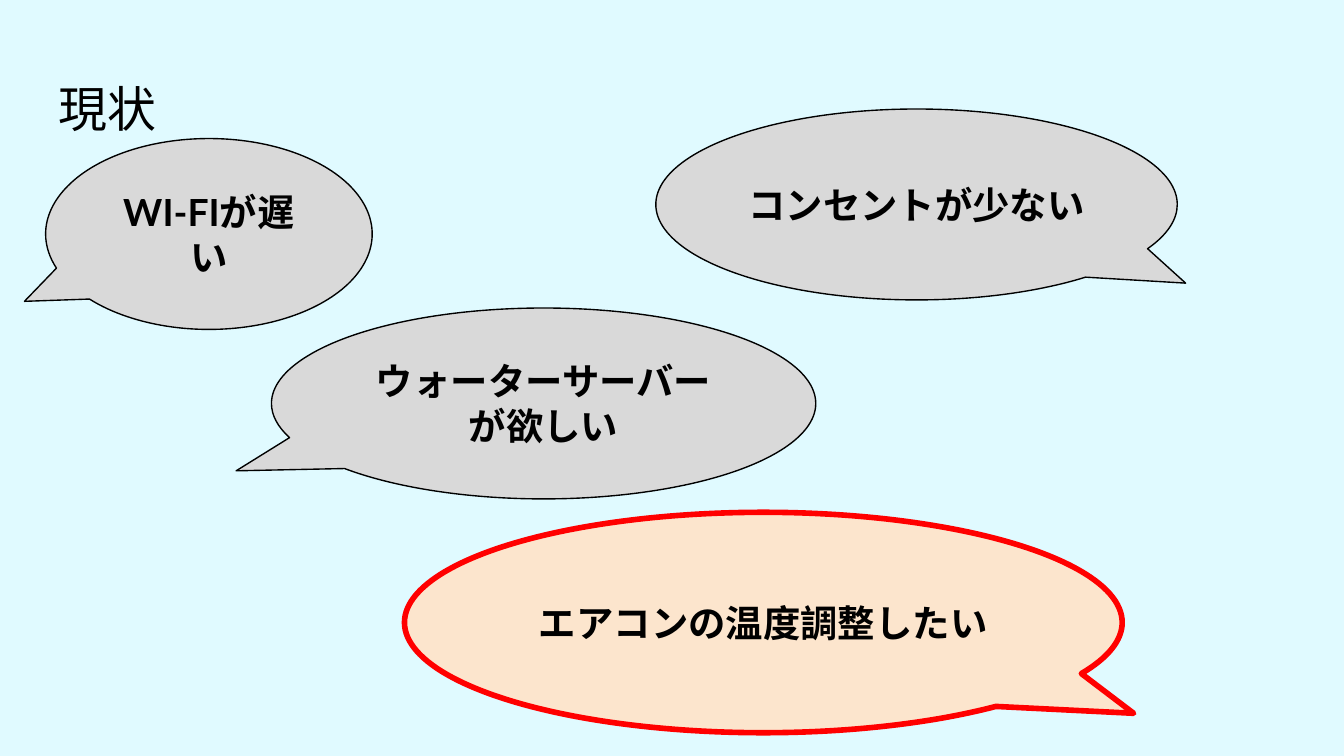
from dataclasses import dataclass

from pptx import Presentation
from pptx.dml.color import RGBColor
from pptx.enum.shapes import MSO_SHAPE
from pptx.enum.text import MSO_ANCHOR, PP_ALIGN
from pptx.util import Inches, Pt


@dataclass(frozen=True)
class Theme:
    font: str = "Lato"
    background: str = "E0FAFF"
    ink: str = "000000"
    bubble: str = "D9D9D9"
    highlight: str = "FCE5CD"
    alert: str = "FF0000"
    title_size: float = 26.2
    bubble_size: float = 20
    thin: float = 0.75
    thick: float = 3


theme = Theme()
deck = Presentation()
deck.slide_width = Inches(10)
deck.slide_height = deck.slide_width * 9 // 16
page = deck.slides.add_slide(deck.slide_layouts[6])
page.background.fill.solid()
page.background.fill.fore_color.rgb = RGBColor.from_string(theme.background)


def place(left, top, width, height):
    column, row = deck.slide_width / 100, deck.slide_height / 100
    return [round(share * unit) for share, unit in
            zip((left, top, width, height), (column, row, column, row))]


def write(box, text, *, size, bold=False, align=PP_ALIGN.LEFT, anchor=MSO_ANCHOR.TOP):
    frame = box.text_frame
    frame.word_wrap = True
    frame.vertical_anchor = anchor
    frame.margin_left = frame.margin_right = Inches(0.1)
    frame.margin_top = frame.margin_bottom = Inches(0.1)
    para = frame.paragraphs[0]
    para.alignment = align
    span = para.add_run()
    span.text = text
    span.font.name = theme.font
    span.font.size = Pt(size)
    span.font.bold = bold
    span.font.color.rgb = RGBColor.from_string(theme.ink)


title = page.shapes.add_textbox(*place(3.41, 8.65, 93.18, 11.2))
write(title, "現状", size=theme.title_size)

tail_left = (-0.565, 0.353)
tail_right = (0.516, 0.412)
plain = (theme.bubble, theme.ink, theme.thin)
emphasis = (theme.highlight, theme.alert, theme.thick)
bubbles = [
    ("WI-FIが遅い", (3.4, 18.33, 24.3, 25.25), tail_left, plain),
    ("コンセントが少ない", (48.8, 14.43, 38.8, 25.25), tail_right, plain),
    ("ウォーターサーバーが欲しい", (20.2, 40.75, 40.5, 25.25), tail_left, plain),
    ("エアコンの温度調整したい", (30.1, 67.77, 53.4, 29.16), tail_right, emphasis),
]

for text, area, tail, (fill, outline, weight) in bubbles:
    bubble = page.shapes.add_shape(MSO_SHAPE.OVAL_CALLOUT, *place(*area))
    bubble.adjustments[0], bubble.adjustments[1] = tail
    bubble.shadow.inherit = False
    bubble.fill.solid()
    bubble.fill.fore_color.rgb = RGBColor.from_string(fill)
    bubble.line.color.rgb = RGBColor.from_string(outline)
    bubble.line.width = Pt(weight)
    write(bubble, text, size=theme.bubble_size, bold=True,
          align=PP_ALIGN.CENTER, anchor=MSO_ANCHOR.MIDDLE)

deck.save("out.pptx")
